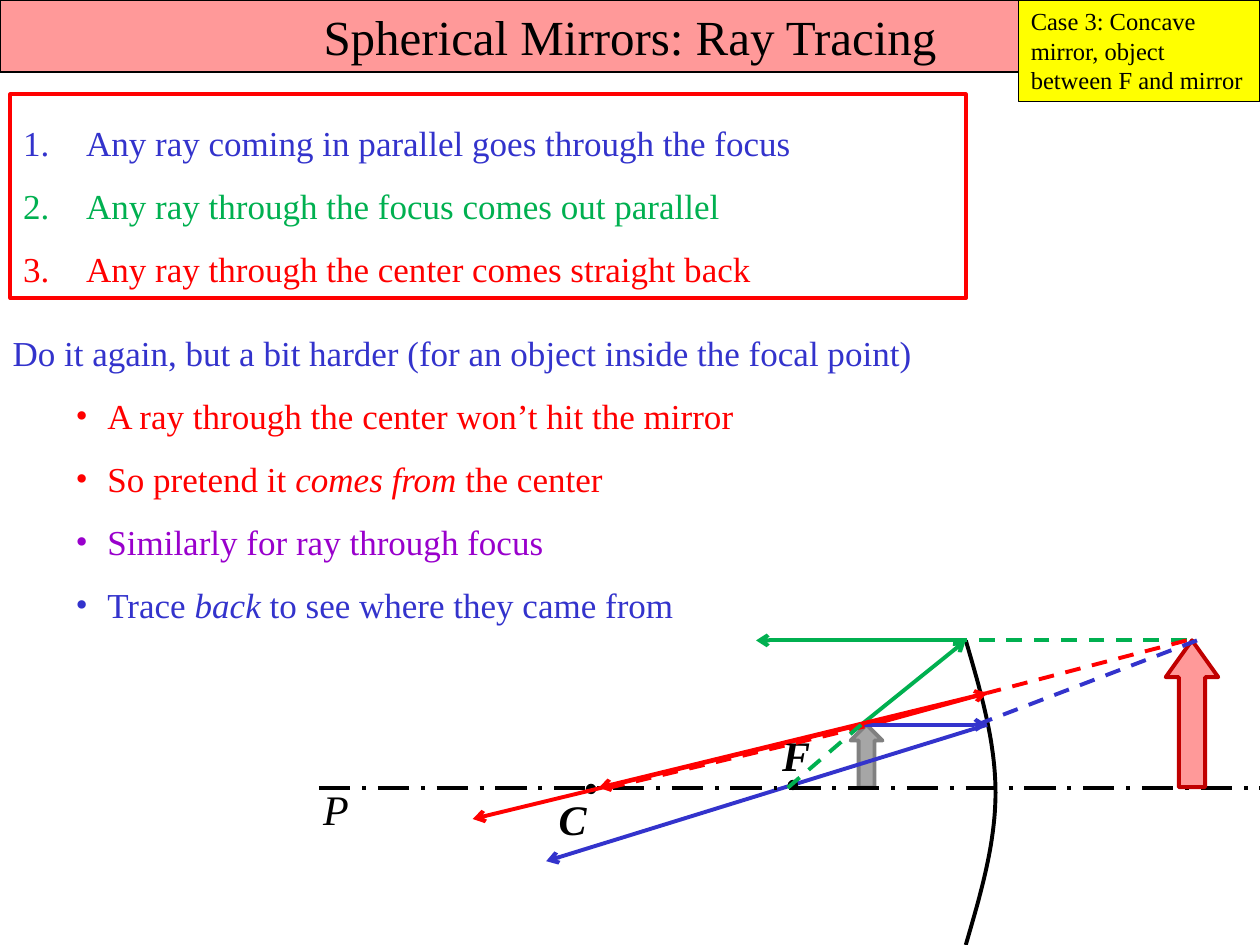
from dataclasses import dataclass
from lxml import etree
from pptx import Presentation, util as u
from pptx.dml.color import RGBColor
from pptx.enum import dml, shapes, text
from pptx.oxml.ns import qn


@dataclass
class Theme:
    font: str = "Times New Roman"
    black: str = "000000"
    red: str = "FF0000"
    blue: str = "3333CC"
    green: str = "00B050"
    purple: str = "9900CC"
    pink: str = "FF9999"
    crimson: str = "C00000"
    yellow: str = "FFFF00"
    silver: str = "A6A6A6"
    grey: str = "808080"
    title: int = 28
    mark: int = 24
    body: int = 20
    note: int = 14
    thin: float = 0.75
    thick: float = 2.25


class Board:
    def __init__(self, slide, theme):
        self.slide = slide
        self.theme = theme

    def place(self, shape, box):
        shape.left, shape.top, shape.width, shape.height = map(u.Cm, box)

    def paint(self, shape, fill=None, line=None, width=0):
        if fill:
            shape.fill.solid()
            shape.fill.fore_color.rgb = RGBColor.from_string(fill)
        else:
            shape.fill.background()
        if line:
            shape.line.color.rgb = RGBColor.from_string(line)
            shape.line.width = u.Pt(width)
        else:
            shape.line.fill.background()

    def style(self, font, size, color, bold=False, italic=False):
        font.name = self.theme.font
        font.size = u.Pt(size)
        font.color.rgb = RGBColor.from_string(color)
        font.bold = bold
        font.italic = italic

    def label(self, shape, words, size, align, **look):
        frame = shape.text_frame
        frame.word_wrap = True
        frame.auto_size = text.MSO_AUTO_SIZE.NONE
        frame.text = words
        para = frame.paragraphs[0]
        para.alignment = align
        self.style(para.runs[0].font, size, self.theme.black, **look)

    def title(self, words, box):
        shape = self.slide.shapes.title
        self.place(shape, box)
        self.paint(shape, self.theme.pink, self.theme.black, self.theme.thin)
        self.label(shape, words, self.theme.title, text.PP_ALIGN.CENTER)

    def bullet(self, para, kind):
        left, hang, tag, attrs = {
            "plain": (0, 0, "a:buNone", {}),
            "number": (1.27, -1.27, "a:buAutoNum", {"type": "arabicPeriod"}),
            "dot": (1.91, -0.64, "a:buChar", {"char": "•"}),
        }[kind]
        props = para._p.get_or_add_pPr()
        props.set("marL", str(u.Cm(left)))
        props.set("indent", str(u.Cm(hang)))
        if kind == "dot":
            etree.SubElement(props, qn("a:buFont"), typeface=self.theme.font)
        etree.SubElement(props, qn(tag), attrs)

    def list(self, spot, box, items, frame=None):
        shape = self.slide.placeholders[spot]
        self.place(shape, box)
        self.paint(shape, None, frame, self.theme.thick)
        body = shape.text_frame
        body.word_wrap = True
        body.auto_size = text.MSO_AUTO_SIZE.NONE
        for i, (kind, color, words) in enumerate(items):
            para = body.add_paragraph() if i else body.paragraphs[0]
            para.line_spacing = 1.5
            para.space_before = u.Pt(0)
            self.bullet(para, kind)
            for j, part in enumerate(words.split("*")):
                run = para.add_run()
                run.text = part
                self.style(run.font, self.theme.body, color, italic=j % 2 == 1)

    def note(self, words, box):
        shape = self.shape(shapes.MSO_SHAPE.RECTANGLE, box, self.theme.yellow,
                           self.theme.black, self.theme.thin)
        shape.text_frame.vertical_anchor = text.MSO_ANCHOR.TOP
        self.label(shape, words, self.theme.note, text.PP_ALIGN.LEFT)

    def shape(self, kind, box, fill, line=None, width=0, home=None):
        home = home or self.slide
        shape = home.shapes.add_shape(kind, *map(u.Cm, box))
        shape.shadow.inherit = False
        self.paint(shape, fill, line, width)
        return shape

    def dot(self, x, y, home=None):
        self.shape(shapes.MSO_SHAPE.OVAL, (x, y, 0.21, 0.21), self.theme.black, home=home)

    def mark(self, words, x, y, wide=1.06, bold=True, home=None):
        home = home or self.slide
        shape = home.shapes.add_textbox(*map(u.Cm, (x, y, wide, 1.27)))
        self.label(shape, words, self.theme.mark, text.PP_ALIGN.CENTER, bold=bold, italic=True)

    def object(self, box, head, fill, line):
        shape = self.shape(shapes.MSO_SHAPE.DOWN_ARROW, box, fill, line, self.theme.thick)
        shape.adjustments[0] = 0.5
        shape.adjustments[1] = head
        shape._element.spPr.xfrm.set("flipV", "1")

    def ray(self, start, end, color, dash=None):
        line = self.slide.shapes.add_connector(
            shapes.MSO_CONNECTOR.STRAIGHT, *map(u.Cm, start + end))
        line.line.color.rgb = RGBColor.from_string(color)
        line.line.width = u.Pt(self.theme.thick)
        props = line._element.spPr
        if dash:
            line.line.dash_style = dash
        else:
            etree.SubElement(props.find(qn("a:ln")), qn("a:tailEnd"), type="arrow")
        etree.SubElement(props, qn("a:effectLst"))

    def mirror(self, edge, pole, top, base, steps=24):
        mid = (top + base) / 2
        half = []
        for i in range(steps + 1):
            t = i / steps
            s = 1 - t
            bend = 3 * s * s * t * (edge + 0.5 * (pole - edge)) + 3 * s * t * t * pole
            half.append((s ** 3 * edge + bend + t ** 3 * pole, top + t * (mid - top)))
        lower = [(x, 2 * mid - y) for x, y in half[-2::-1]]
        points = [(u.Cm(x), u.Cm(y)) for x, y in half + lower]
        pen = self.slide.shapes.build_freeform(*points[0])
        pen.add_line_segments(points[1:], close=False)
        shape = pen.convert_to_shape()
        shape.shadow.inherit = False
        self.paint(shape, None, self.theme.black, self.theme.thick)


def main():
    deck = Presentation()
    deck.slide_width, deck.slide_height = u.Cm(25.4), u.Cm(19.05)
    t = Theme()
    b = Board(deck.slides.add_slide(deck.slide_layouts[3]), t)
    dash = dml.MSO_LINE.DASH

    b.title("Spherical Mirrors: Ray Tracing", (0, 0, 25.4, 1.45))
    b.list(1, (0.21, 1.9, 19.26, 4.11), [
        ("number", t.blue, "Any ray coming in parallel goes through the focus"),
        ("number", t.green, "Any ray through the focus comes out parallel"),
        ("number", t.red, "Any ray through the center comes straight back"),
    ], t.red)
    b.list(2, (0, 6.14, 22.65, 6.68), [
        ("plain", t.blue, "Do it again, but a bit harder (for an object inside the focal point)"),
        ("dot", t.red, "A ray through the center won’t hit the mirror"),
        ("dot", t.red, "So pretend it *comes from* the center"),
        ("dot", t.purple, "Similarly for ray through focus"),
        ("dot", t.blue, "Trace *back* to see where they came from"),
    ])

    axis, tip, high, hit = 15.88, 14.61, 12.91, 13.97
    rim, glass, peak = 19.47, 19.9, 17.36
    b.object((17.15, tip, 0.64, 1.27), 0.5, t.silver, t.grey)
    b.mirror(rim, 20.07, high, 19.05)
    b.dot(11.81, 15.8)
    b.ray((glass, tip), (11.01, 17.36), t.blue)
    b.mark("C", 11.01, axis)
    b.ray((6.43, axis), (25.4, axis), t.black, dml.MSO_LINE.LONG_DASH_DOT)
    b.ray((17.57, tip), (glass, hit), t.red)
    b.ray((peak, tip), (9.53, 16.51), t.red)
    b.ray((peak, tip), (rim, high), t.green)
    b.ray((rim, high), (15.24, high), t.green)
    b.object((23.5, high, 1.06, 2.96), 0.7, t.pink, t.crimson)
    b.mark("P", 6.14, 15.66, 1.27, False)
    focus = b.slide.shapes.add_group_shape()
    b.dot(15.88, 15.72, focus)
    b.mark("F", 15.52, 14.58, home=focus)
    b.ray((peak, tip), (glass, tip), t.blue)
    b.ray((12.28, axis), (17.57, tip), t.red, dash)
    b.ray((glass, hit), (12.07, axis), t.red)
    b.ray((15.88, axis), (peak, tip), t.green, dash)
    b.ray((23.92, high), (rim, high), t.green, dash)
    b.ray((23.92, high), (glass, hit), t.red, dash)
    b.ray((24.13, high), (19.69, tip), t.blue, dash)
    b.note("Case 3: Concave mirror, object between F and mirror", (20.53, 0, 4.87, 2.05))
    deck.save("out.pptx")


if __name__ == "__main__":
    main()
